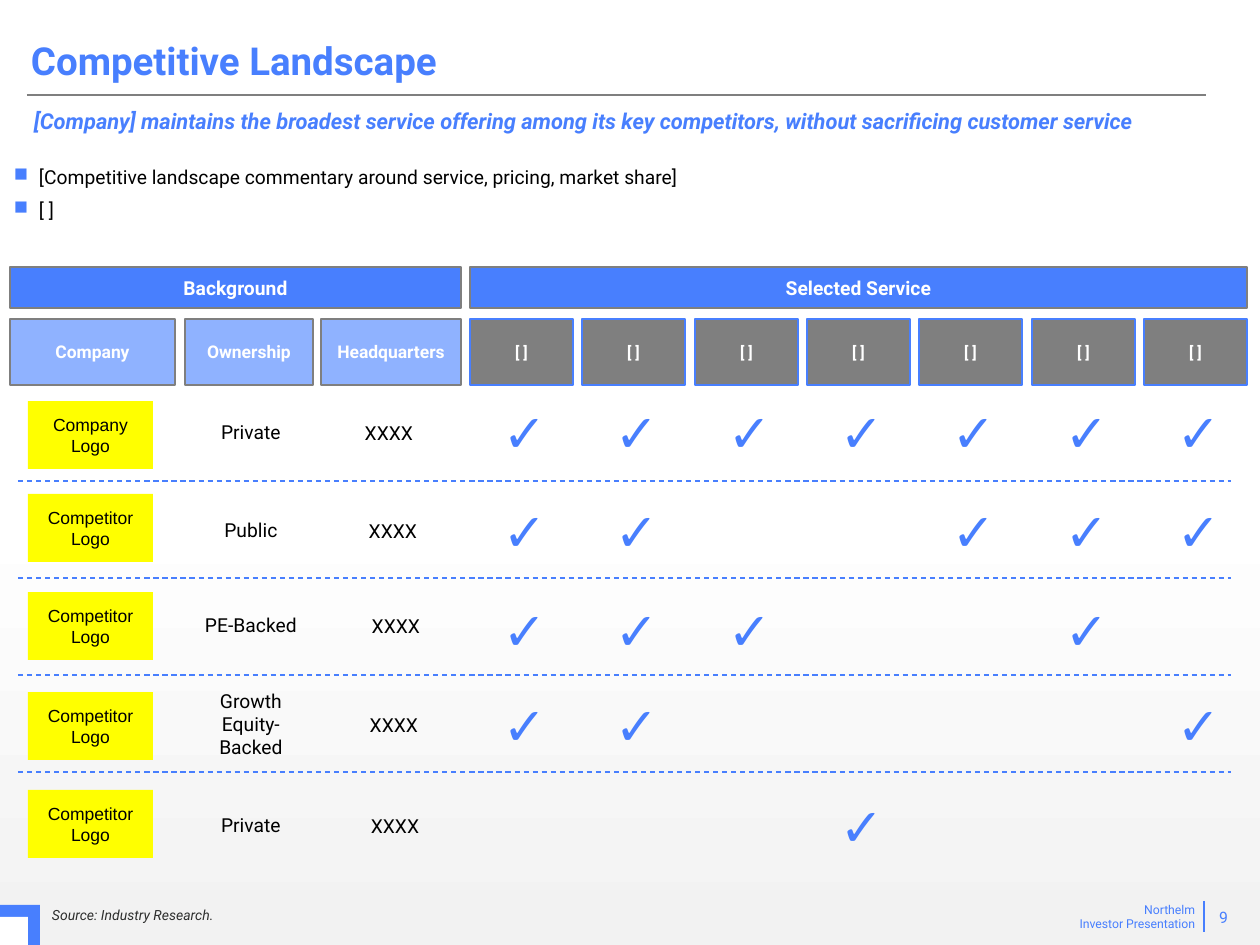
import dataclasses

import lxml.etree
import pptx
import pptx.dml.color
import pptx.enum.dml
import pptx.enum.shapes
import pptx.enum.text
import pptx.oxml.ns
import pptx.util

EMU_PER_PX = 914400 / 126
ALIGN = pptx.enum.text.PP_ALIGN
ANCHOR = pptx.enum.text.MSO_ANCHOR
BOX_INSETS = (13, 6, 13, 6)
CELL_INSETS = (0, 1, 0, 0)
TIGHT_INSETS = (1, 1, 1, 1)


@dataclasses.dataclass(frozen=True)
class Theme:
    """Colours, fonts and type sizes of the slide."""
    blue: str = "487FFE"
    light_blue: str = "8FB2FF"
    gray: str = "7F7F7F"
    pale: str = "F2F2F2"
    white: str = "FFFFFF"
    black: str = "000000"
    ink: str = "2D2E2D"
    yellow: str = "FFFF00"
    font: str = "Roboto"
    logo_font: str = "Arial"
    check_font: str = "Noto Sans"
    title: float = 22
    subtitle: float = 12.5
    body: float = 11
    label: float = 10
    small: float = 9
    source: float = 8
    footer: float = 7
    check: float = 30


@dataclasses.dataclass(frozen=True)
class Row:
    """One company: text centre, logo and check tops, headquarters box, services."""
    logo: str
    ownership: str
    centre: int
    logo_top: int
    check_top: int
    headquarters: tuple
    services: tuple
    ownership_height: int = 25


THEME = Theme()
ROWS = (
    Row("Company Logo", "Private", 432, 401, 399, (336, 100), (0, 1, 2, 3, 4, 5, 6)),
    Row("Competitor Logo", "Public", 530, 494, 498, (320, 140), (0, 1, 4, 5, 6)),
    Row("Competitor Logo", "PE-Backed", 625, 592, 597, (323, 140), (0, 1, 2, 5)),
    Row("Competitor Logo", "Growth Equity-Backed", 724, 692, 692, (321, 140), (0, 1, 6), 72),
    Row("Competitor Logo", "Private", 825, 790, 793, (321, 142), (3,)),
)
BACKGROUND_COLUMNS = (("Company", 10, 165), ("Ownership", 185, 128), ("Headquarters", 321, 140))
SERVICE_LEFTS = [470 + round(index * 112.33) for index in range(7)]


def px(value):
    """Turn px into EMU."""
    return pptx.util.Emu(round(value * EMU_PER_PX))


def rgb(color):
    """Turn a hex string into a colour."""
    return pptx.dml.color.RGBColor.from_string(color)


def write_text(shape, lines, size, color, font=THEME.font, bold=False, italic=False,
               align=ALIGN.LEFT, anchor=ANCHOR.TOP, insets=BOX_INSETS, indent=0):
    """Fill the text frame of a shape, one paragraph a line."""
    frame = shape.text_frame
    frame.word_wrap = True
    frame.vertical_anchor = anchor
    frame.margin_left, frame.margin_top, frame.margin_right, frame.margin_bottom = map(px, insets)
    for index, line in enumerate(lines):
        paragraph = frame.add_paragraph() if index else frame.paragraphs[0]
        paragraph.alignment = align
        if indent:
            paragraph._p.get_or_add_pPr().set("marL", str(px(indent)))
        run = paragraph.add_run()
        run.text = line
        run.font.name = font
        run.font.size = pptx.util.Pt(size)
        run.font.bold = bold
        run.font.italic = italic
        run.font.color.rgb = rgb(color)


def add_text(slide, box, lines, size, color, **style):
    """Add a text box and return it."""
    shape = slide.shapes.add_textbox(*map(px, box))
    write_text(shape, lines, size, color, **style)
    return shape


def add_cell_text(slide, box, text, size=THEME.body, color=THEME.black, **style):
    """Add centred text that belongs to one cell of the grid."""
    shape = add_text(slide, box, [text], size, color, align=ALIGN.CENTER,
                     insets=CELL_INSETS, indent=6, **style)
    shape.text_frame.auto_size = pptx.enum.text.MSO_AUTO_SIZE.SHAPE_TO_FIT_TEXT


def add_box(slide, box, fill, outline=None, text=None, size=THEME.label, color=THEME.white, **style):
    """Add a rectangle, with centred text if there is any."""
    shape = slide.shapes.add_shape(pptx.enum.shapes.MSO_SHAPE.RECTANGLE, *map(px, box))
    shape.shadow.inherit = False
    shape.fill.solid()
    shape.fill.fore_color.rgb = rgb(fill)
    if outline:
        shape.line.color.rgb = rgb(outline)
        shape.line.width = pptx.util.Pt(1.5)
    else:
        shape.line.fill.background()
    if text:
        write_text(shape, [text], size, color, align=ALIGN.CENTER, anchor=ANCHOR.MIDDLE, **style)


def add_line(slide, start, end, color, width=0.75, dashed=False):
    """Add a straight line without a shadow."""
    line = slide.shapes.add_connector(
        pptx.enum.shapes.MSO_CONNECTOR.STRAIGHT, *map(px, start + end))
    line.line.color.rgb = rgb(color)
    line.line.width = pptx.util.Pt(width)
    if dashed:
        line.line.dash_style = pptx.enum.dml.MSO_LINE.DASH
    lxml.etree.SubElement(line._element.spPr, pptx.oxml.ns.qn("a:effectLst"))


def add_bullets(slide, box, lines):
    """Add a list with square blue bullets."""
    shape = add_text(slide, box, lines, THEME.body, THEME.black,
                     align=ALIGN.JUSTIFY, insets=CELL_INSETS, indent=26)
    for index, paragraph in enumerate(shape.text_frame.paragraphs):
        if index:
            paragraph.space_before = pptx.util.Pt(6)
        properties = paragraph._p.get_or_add_pPr()
        properties.set("indent", str(px(-25)))
        bullet_color = lxml.etree.SubElement(properties, pptx.oxml.ns.qn("a:buClr"))
        lxml.etree.SubElement(bullet_color, pptx.oxml.ns.qn("a:srgbClr"), val=THEME.blue)
        lxml.etree.SubElement(properties, pptx.oxml.ns.qn("a:buChar"), char="■")


def paint_background(slide):
    """Fade the background from white to pale gray in its lower half."""
    fill = slide.background.fill
    fill.gradient()
    fill.gradient_angle = 270
    for stop, position, color in zip(fill.gradient_stops, (0.53, 1), (THEME.white, THEME.pale)):
        stop.position = position
        stop.color.rgb = rgb(color)


def add_heading(slide):
    """Add the title, its rule, the subtitle and the commentary."""
    add_line(slide, (27, 95), (1206, 95), THEME.gray, 1.5)
    title = add_text(slide, (18, 31, 993, 59), ["Competitive Landscape"], THEME.title,
                     THEME.blue, bold=True, anchor=ANCHOR.BOTTOM)
    title.text_frame.paragraphs[0].line_spacing = 0.9
    add_text(slide, (30, 108, 1212, 62),
             ["[Company] maintains the broadest service offering among its key competitors, "
              "without sacrificing customer service"],
             THEME.subtitle, THEME.blue, bold=True, italic=True, insets=(4, 0, 0, 0))
    add_bullets(slide, (13, 164, 1188, 59),
                ["[Competitive landscape commentary around service, pricing, market share]", "[ ]"])


def add_headers(slide):
    """Add the two header rows of the grid."""
    for text, left, width in (("Background", 10, 451), ("Selected Service", 470, 777)):
        add_box(slide, (left, 267, width, 41), THEME.blue, THEME.gray, text, THEME.body, bold=True)
    for text, left, width in BACKGROUND_COLUMNS:
        add_box(slide, (left, 319, width, 66), THEME.light_blue, THEME.gray, text, bold=True)
    for left in SERVICE_LEFTS:
        add_box(slide, (left, 319, 103, 66), THEME.gray, THEME.blue, "[ ]", THEME.small,
                bold=True, insets=TIGHT_INSETS)


def add_row(slide, row):
    """Add the logo, the facts and the checks of one company."""
    add_box(slide, (28, row.logo_top, 125, 68), THEME.yellow, text=row.logo,
            color=THEME.black, font=THEME.logo_font)
    add_cell_text(slide, (198, row.centre - row.ownership_height / 2, 100, row.ownership_height),
                  row.ownership)
    left, width = row.headquarters
    add_cell_text(slide, (left, row.centre - 12, width, 25), "XXXX")
    for service in row.services:
        add_cell_text(slide, (SERVICE_LEFTS[service] + 11, row.check_top, 81, 66), "✓",
                      THEME.check, THEME.blue, font=THEME.check_font, bold=True)


def add_footer(slide):
    """Add the corner mark, the source, the deck name and the page number."""
    add_box(slide, (0, 905, 40, 40), THEME.blue)
    add_box(slide, (0, 917, 28, 28), THEME.white)
    add_text(slide, (52, 905, 925, 18), ["Source: Industry Research."], THEME.source, THEME.ink,
             italic=True, anchor=ANCHOR.BOTTOM, insets=(0, 0, 0, 0))
    add_text(slide, (1062, 896, 146, 43), ["Northelm", "Investor Presentation"],
             THEME.footer, THEME.blue, align=ALIGN.RIGHT)
    add_line(slide, (1204, 901), (1204, 932), THEME.blue)
    add_text(slide, (1147, 902, 94, 30), ["9"], THEME.small, THEME.blue,
             align=ALIGN.RIGHT, anchor=ANCHOR.MIDDLE)


def main():
    """Build the slide and save it."""
    presentation = pptx.Presentation()
    presentation.slide_width, presentation.slide_height = px(1260), px(945)
    slide = presentation.slides.add_slide(presentation.slide_layouts[6])
    paint_background(slide)
    add_heading(slide)
    add_headers(slide)
    for row in ROWS:
        add_row(slide, row)
    for index in range(len(ROWS) - 1):
        top = 481 + 97 * index
        add_line(slide, (18, top), (1231, top), THEME.blue, dashed=True)
    add_footer(slide)
    presentation.save("out.pptx")


if __name__ == "__main__":
    main()
